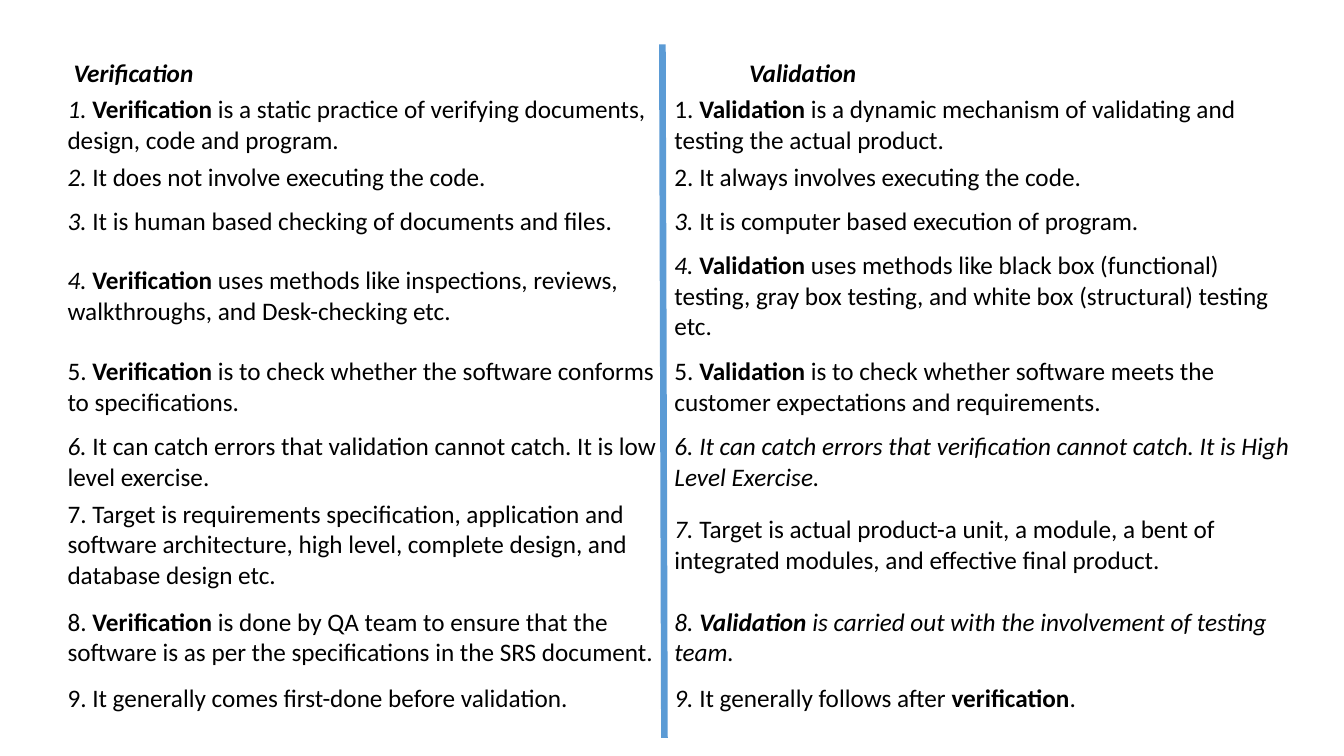
import pptx
import pptx.dml.color
import pptx.enum.shapes
import pptx.enum.text
import pptx.oxml.ns
import pptx.util
from lxml import etree

Inches = pptx.util.Inches
COLORS = {"text": "000000", "divider": "5B9BD5"}
FONT = "Calibri"
TEXT_SIZE = 18
COLUMN_WIDTHS = [6.02, 6.16]
ROW_HEIGHTS = [0.2, 0.68, 0.36, 0.52, 0.84, 0.84, 0.52, 1, 0.84, 0.36]
HEADING_INDENTS = [0.06, 0.74]

COMPARISON = [
    ([("Verification", "bi")], [("Validation", "bi")]),
    (
        [("1. ", "i"), ("Verification", "b"),
         (" is a static practice of verifying documents, design, code and program.", "")],
        [("1. ", ""), ("Validation", "b"),
         (" is a dynamic mechanism of validating and testing the actual product.", "")],
    ),
    (
        [("2. ", "i"), ("It does not involve executing the code.", "")],
        [("2. It always involves executing the code.", "")],
    ),
    (
        [("3. ", "i"), ("It is human based checking of documents and files.", "")],
        [("3. ", "i"), ("It is computer based execution of program.", "")],
    ),
    (
        [("4. ", "i"), ("Verification", "b"),
         (" uses methods like inspections, reviews, walkthroughs, and Desk-checking etc.", "")],
        [("4. ", "i"), ("Validation", "b"),
         (" uses methods like black box (functional) testing, gray box testing, "
          "and white box (structural) testing etc.", "")],
    ),
    (
        [("5. ", ""), ("Verification ", "b"),
         ("is to check whether the software conforms to specifications.", "")],
        [("5. ", ""), ("Validation", "b"),
         (" is to check whether software meets the customer expectations and requirements.", "")],
    ),
    (
        [("6. ", "i"),
         ("It can catch errors that validation cannot catch. It is low level exercise.", "")],
        [("6. It can catch errors that verification cannot catch. "
          "It is High Level Exercise.", "i")],
    ),
    (
        [("7. Target is requirements specification, application and software architecture, "
          "high level, complete design, and database design etc.", "")],
        [("7. ", "i"),
         ("Target is actual product-a unit, a module, a bent of integrated modules, "
          "and effective final product.", "")],
    ),
    (
        [("8. ", ""), ("Verification", "b"),
         (" is done by QA team to ensure that the software is as per the specifications "
          "in the SRS document.", "")],
        [("8. ", "i"), ("Validation", "bi"),
         (" is carried out with the involvement of testing team.", "i")],
    ),
    (
        [("9. It generally comes first-done before validation.", "")],
        [("9. ", "i"), ("It generally follows after ", ""), ("verification", "b"), (".", "")],
    ),
]


def rgb(name):
    return pptx.dml.color.RGBColor.from_string(COLORS[name])


def write_cell(cell, statement, indent=0):
    cell.fill.background()
    cell.vertical_anchor = pptx.enum.text.MSO_ANCHOR.MIDDLE
    cell.margin_left = cell.margin_top = cell.margin_bottom = Inches(0.02)
    cell.margin_right = Inches(0.03)
    paragraph = cell.text_frame.paragraphs[0]
    if indent:
        properties = paragraph._p.get_or_add_pPr()
        properties.set("marL", str(Inches(indent)))
        properties.set("indent", "0")
    for words, style in statement:
        run = paragraph.add_run()
        run.text = words
        run.font.name = FONT
        run.font.size = pptx.util.Pt(TEXT_SIZE)
        run.font.bold = "b" in style
        run.font.italic = "i" in style
        run.font.color.rgb = rgb("text")


def add_comparison(slide, left, top, width, height):
    comparison = slide.shapes.add_table(
        len(COMPARISON), len(COLUMN_WIDTHS),
        Inches(left), Inches(top), Inches(width), Inches(height),
    ).table
    comparison.first_row = False
    comparison.horz_banding = False
    for column, column_width in zip(comparison.columns, COLUMN_WIDTHS):
        column.width = Inches(column_width)
    for row, row_height in zip(comparison.rows, ROW_HEIGHTS):
        row.height = Inches(row_height)
    for row_index, statements in enumerate(COMPARISON):
        for column_index, statement in enumerate(statements):
            indent = HEADING_INDENTS[column_index] if row_index == 0 else 0
            write_cell(comparison.cell(row_index, column_index), statement, indent)


def add_divider(slide, left, top, width, height):
    divider = slide.shapes.add_connector(
        pptx.enum.shapes.MSO_CONNECTOR.STRAIGHT,
        Inches(left), Inches(top), Inches(left + width), Inches(top + height),
    )
    divider.line.color.rgb = rgb("divider")
    divider.line.width = pptx.util.Pt(4.75)
    etree.SubElement(divider._element.spPr, pptx.oxml.ns.qn("a:effectLst"))


def main():
    presentation = pptx.Presentation()
    presentation.slide_width = Inches(13.33)
    presentation.slide_height = Inches(7.5)
    slide = presentation.slides.add_slide(presentation.slide_layouts[6])
    add_comparison(slide, 0.65, 0.56, sum(COLUMN_WIDTHS), sum(ROW_HEIGHTS))
    add_divider(slide, 6.57, 0.44, 0.02, 6.88)
    presentation.save("out.pptx")


if __name__ == "__main__":
    main()
